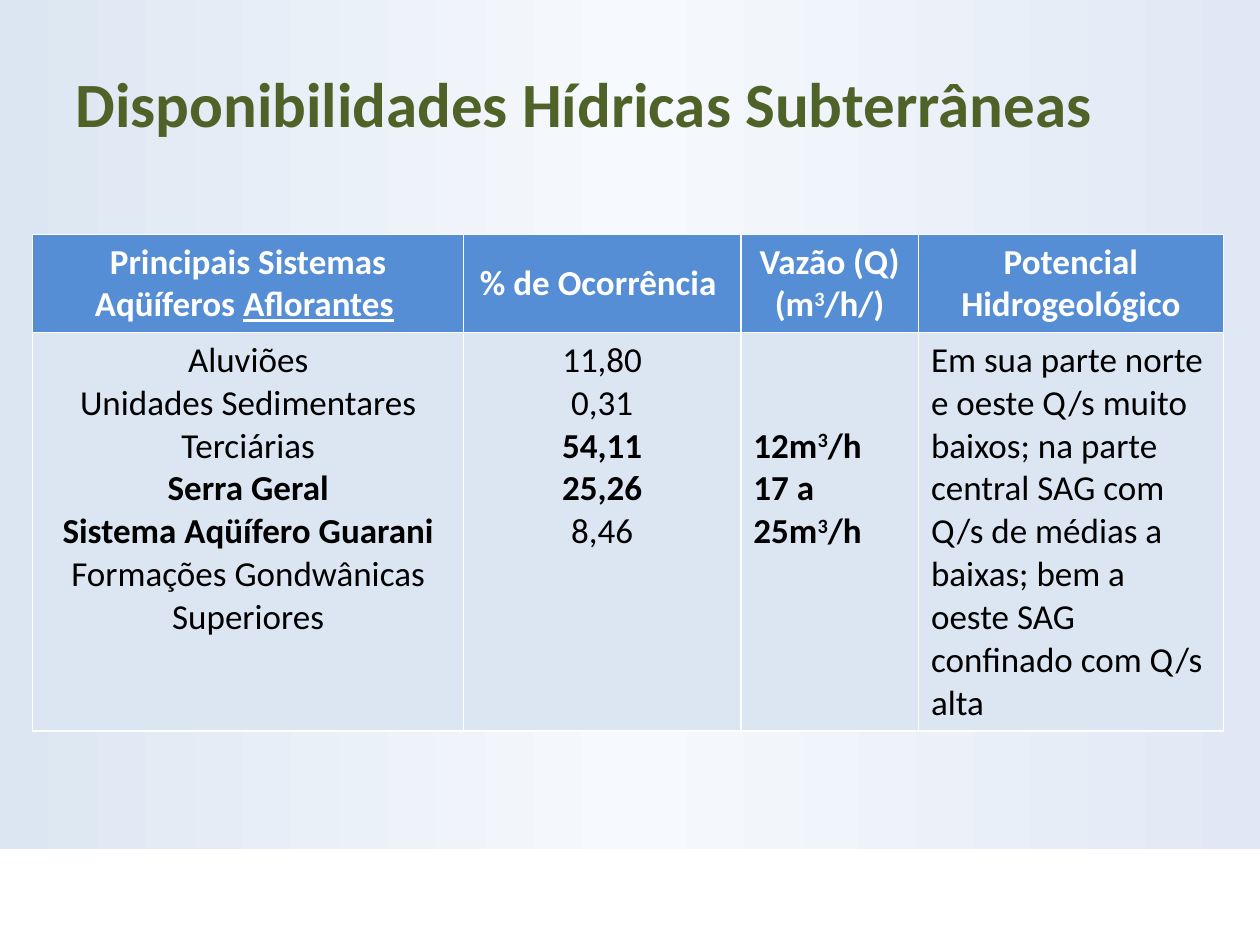
"""Build the slide on groundwater availability with its aquifer table."""
from copy import deepcopy

from lxml.etree import SubElement
from pptx import Presentation
from pptx.dml.color import RGBColor
from pptx.enum.shapes import MSO_SHAPE
from pptx.enum.text import MSO_ANCHOR, MSO_AUTO_SIZE, PP_ALIGN
from pptx.oxml import parse_xml
from pptx.oxml.ns import nsdecls, qn
from pptx.util import Inches, Pt

WHITE = RGBColor(0xFF, 0xFF, 0xFF)
BLACK = RGBColor(0x00, 0x00, 0x00)
GREEN = RGBColor(0x4F, 0x62, 0x28)
BLUE = RGBColor(0x55, 0x8E, 0xD5)
PALE = RGBColor(0xDC, 0xE6, 0xF2)
GRADIENT = [(0, PALE), (0.5, RGBColor(0xF6, 0xF9, 0xFD)), (1, RGBColor(0xE1, 0xE8, 0xF5))]
FONT = "Calibri"

TITLE = "Disponibilidades Hídricas Subterrâneas"
HEADER = [
    [[("Principais Sistemas Aqüíferos ", "b"), ("Aflorantes", "bu"), (" ", "b")]],
    [[("% de Ocorrência ", "b")]],
    [[("Vazão (Q)", "b")], [("(m", "b"), ("3", "b^"), ("/h/)", "b")]],
    [[("Potencial Hidrogeológico", "b")]],
]
AQUIFERS = [
    ("Aluviões", "11,80", ""),
    ("Unidades Sedimentares Terciárias", "0,31", ""),
    ("Serra Geral", "54,11", "b"),
    ("Sistema Aqüífero Guarani", "25,26", "b"),
    ("Formações Gondwânicas Superiores", "8,46", ""),
]
BODY = [
    [[(name, style)] for name, _, style in AQUIFERS],
    [[(share, style)] for _, share, style in AQUIFERS],
    [[(flow, "b"), ("3", "b^"), ("/h", "b")] for flow in ("12m", "17 a 25m")],
    [[("Em sua parte norte e oeste Q/s muito baixos; na parte central SAG com Q/s "
       "de médias a baixas; bem a oeste SAG confinado com Q/s alta", "")]],
]
COL_WIDTHS = [3.42, 2.2, 1.41, 2.42]
ROW_HEIGHTS = [0.77, 3.1]
FLOW_TOP = 0.73


def style_run(r, size, color, style):
    r.font.name, r.font.size = FONT, Pt(size)
    r.font.color.rgb = color
    r.font.bold = "b" in style
    if "u" in style:
        r.font.underline = True
    if "^" in style:
        r.font._element.set("baseline", "30000")


def add_background(slide):
    sp = slide.shapes.add_shape(MSO_SHAPE.RECTANGLE, 0, 0, Inches(10), Inches(6.74))
    sp.shadow.inherit = False
    sp.line.fill.background()
    sp.fill.gradient()
    sp.fill.gradient_angle = 0
    stops = sp._element.spPr.find(qn("a:gradFill")).find(qn("a:gsLst"))
    stops.insert(1, deepcopy(stops[0]))
    for stop, (position, color) in zip(sp.fill.gradient_stops, GRADIENT):
        stop.position = position
        stop.color.rgb = color
    slide.shapes._spTree.insert(2, sp._element)


def add_title(slide):
    title = slide.shapes.title
    title.left, title.top = Inches(0.5), Inches(0.46)
    title.width, title.height = Inches(9), Inches(0.85)
    tf = title.text_frame
    tf.text = TITLE
    tf.auto_size = MSO_AUTO_SIZE.NONE
    tf.vertical_anchor = MSO_ANCHOR.TOP
    p = tf.paragraphs[0]
    p.alignment = PP_ALIGN.LEFT
    style_run(p.runs[0], 36, GREEN, "b")


def set_borders(cell):
    tc_pr = cell._tc.get_or_add_tcPr()
    for i, side in enumerate(("lnL", "lnR", "lnT", "lnB")):
        line = parse_xml(f'<a:{side} {nsdecls("a")} w="{Pt(1)}"/>')
        fill = SubElement(line, qn("a:solidFill"))
        SubElement(fill, qn("a:srgbClr"), val=str(WHITE))
        tc_pr.insert(i, line)


def fill_cell(cell, paragraphs, fill, color, align, anchor):
    cell.fill.solid()
    cell.fill.fore_color.rgb = fill
    cell.vertical_anchor = anchor
    set_borders(cell)
    tf = cell.text_frame
    for i, runs in enumerate(paragraphs):
        p = tf.add_paragraph() if i else tf.paragraphs[0]
        p.alignment = align
        for text, style in runs:
            r = p.add_run()
            r.text = text
            style_run(r, 20, color, style)


def add_aquifer_table(slide):
    table = slide.shapes.add_table(
        2, len(COL_WIDTHS), Inches(0.26), Inches(1.86),
        Inches(sum(COL_WIDTHS)), Inches(sum(ROW_HEIGHTS))).table
    table.horz_banding = False
    for row, height in zip(table.rows, ROW_HEIGHTS):
        row.height = Inches(height)
    for c, width in enumerate(COL_WIDTHS):
        table.columns[c].width = Inches(width)
        fill_cell(table.cell(0, c), HEADER[c], BLUE, WHITE, PP_ALIGN.CENTER, MSO_ANCHOR.MIDDLE)
        align = PP_ALIGN.CENTER if c < 2 else PP_ALIGN.LEFT
        fill_cell(table.cell(1, c), BODY[c], PALE, BLACK, align, MSO_ANCHOR.TOP)
    table.cell(1, 2).margin_top = Inches(FLOW_TOP)


def main():
    prs = Presentation()
    prs.slide_width, prs.slide_height = Inches(10), Inches(7.5)
    slide = prs.slides.add_slide(prs.slide_layouts[5])
    add_background(slide)
    add_title(slide)
    add_aquifer_table(slide)
    prs.save("out.pptx")


if __name__ == "__main__":
    main()
